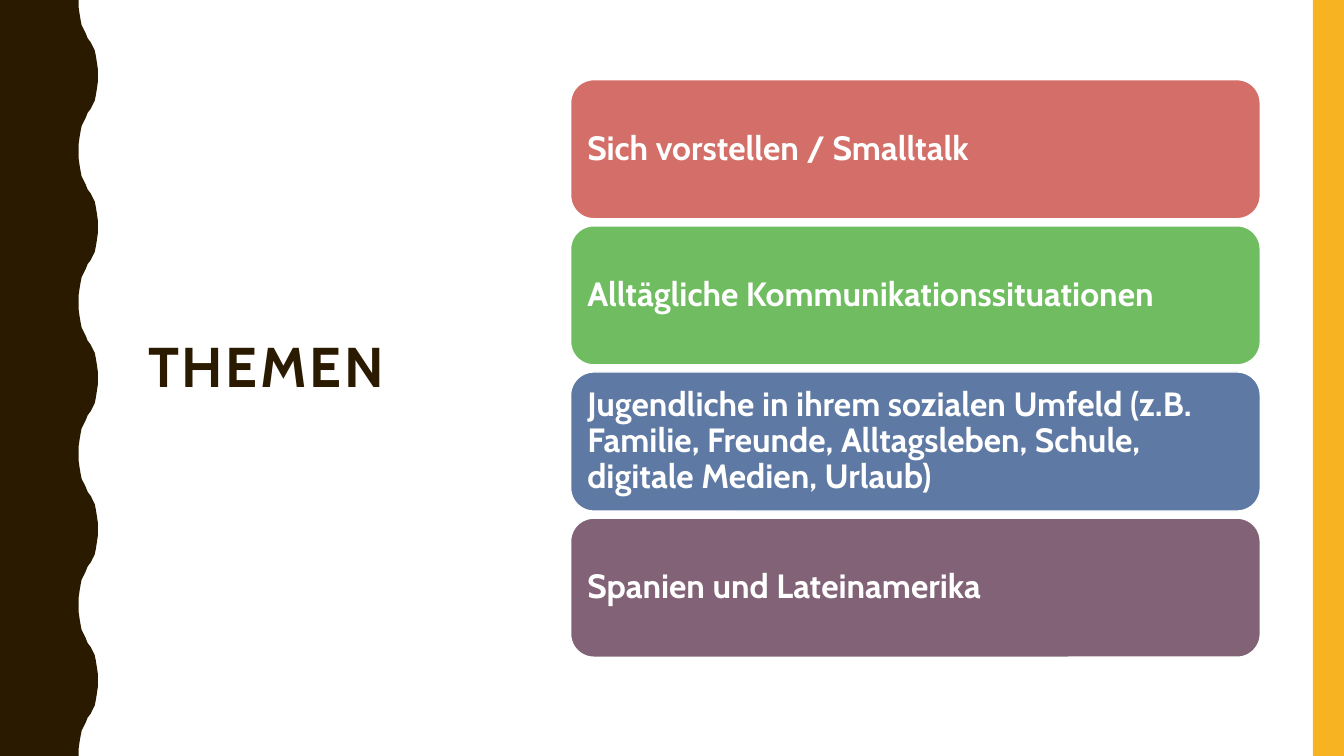
from pptx import Presentation
from pptx.dml.color import RGBColor
from pptx.enum.shapes import MSO_SHAPE
from pptx.enum.text import MSO_ANCHOR, PP_ALIGN
from pptx.util import Inches, Pt

WIDTH, HEIGHT = 13.33, 7.5
DARK, GOLD, WHITE = "2A1A00", "F8B323", "FFFFFF"

TOPICS = [
    ("Sich vorstellen / Smalltalk", "D36F68"),
    ("Alltägliche Kommunikationssituationen", "70BD61"),
    ("Jugendliche in ihrem sozialen Umfeld (z.B. Familie, Freunde, "
     "Alltagsleben, Schule, digitale Medien, Urlaub)", "5E79A3"),
    ("Spanien und Lateinamerika", "826276"),
]
CARD_LEFT, CARD_TOP, CARD_WIDTH, CARD_HEIGHT = 5.66, 0.79, 6.84, 1.38
CARD_PITCH = 1.45

# One eighth-turn of the wavy edge: (x, y) from trough to mid-slope
WAVE_START = [(0.78, 0), (0.78, 0.07), (0.79, 0.14), (0.8, 0.2),
              (0.81, 0.25), (0.83, 0.29), (0.85, 0.33), (0.87, 0.38)]
WAVE_TROUGH, WAVE_CREST, WAVE_PERIOD = 0.78, 0.97, 1.5


def color(hex_text):
    return RGBColor.from_string(hex_text)


def paint(s, fill, line=None):
    s.shadow.inherit = False
    s.fill.solid()
    s.fill.fore_color.rgb = color(fill)
    if line:
        s.line.color.rgb = color(line)
        s.line.width = Pt(1)
    else:
        s.line.fill.background()


def write(s, text, size, fill, inset=0.1, spacing=0):
    tf = s.text_frame
    tf.word_wrap = True
    tf.vertical_anchor = MSO_ANCHOR.MIDDLE
    tf.margin_left = tf.margin_right = Inches(inset)
    tf.margin_top = tf.margin_bottom = Inches(inset)
    p = tf.paragraphs[0]
    p.alignment = PP_ALIGN.LEFT
    p.line_spacing = 0.9
    r = p.add_run()
    r.text = text
    r.font.name = "Cabin"
    r.font.size = Pt(size)
    r.font.bold = True
    r.font.color.rgb = color(fill)
    if spacing:
        r.font._element.set("spc", str(spacing * 100))


def add_box(slide, kind, left, top, width, height, fill, line=None):
    s = slide.shapes.add_shape(kind, Inches(left), Inches(top),
                               Inches(width), Inches(height))
    paint(s, fill, line)
    return s


def wave_points():
    """Mirror the start of the wave into a period, repeated down the slide."""
    half = WAVE_PERIOD / 2
    rise = WAVE_START + [(WAVE_TROUGH + WAVE_CREST - x, half - y)
                         for x, y in reversed(WAVE_START[:-1])]
    period = rise + [(x, WAVE_PERIOD - y) for x, y in reversed(rise[:-1])]
    count = round(HEIGHT / WAVE_PERIOD)
    return [(x, y + i * WAVE_PERIOD) for i in range(count) for x, y in period]


def add_wavy_band(slide):
    points = [(Inches(x), Inches(y))
              for x, y in wave_points() + [(0, HEIGHT)]]
    builder = slide.shapes.build_freeform(0, 0)
    builder.add_line_segments(points, close=True)
    paint(builder.convert_to_shape(), DARK)


def add_title(slide, text):
    s = slide.shapes.add_textbox(Inches(1.37), Inches(0.7),
                                 Inches(3.7), Inches(5.92))
    write(s, text, size=40, fill=DARK, spacing=2)


def main():
    prs = Presentation()
    prs.slide_width, prs.slide_height = Inches(WIDTH), Inches(HEIGHT)
    slide = prs.slides.add_slide(prs.slide_layouts[6])
    add_wavy_band(slide)
    add_box(slide, MSO_SHAPE.RECTANGLE, 13.02, 0, WIDTH - 13.02, HEIGHT, GOLD)
    add_title(slide, "THEMEN")
    for row, (topic, fill) in enumerate(TOPICS):
        card = add_box(slide, MSO_SHAPE.ROUNDED_RECTANGLE, CARD_LEFT,
                       CARD_TOP + row * CARD_PITCH, CARD_WIDTH, CARD_HEIGHT,
                       fill, line=WHITE)
        write(card, topic, size=24, fill=WHITE)
    prs.save("out.pptx")


if __name__ == "__main__":
    main()
